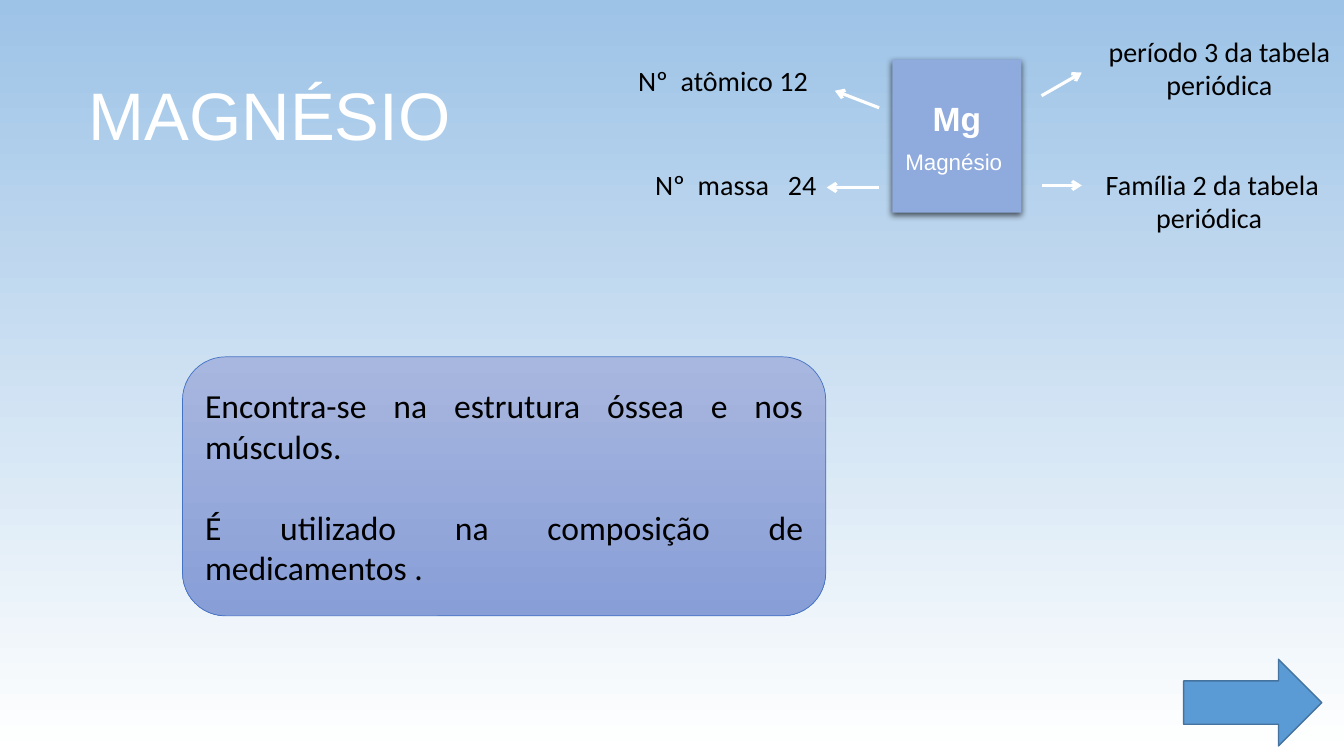
from dataclasses import dataclass

from lxml import etree
from pptx import Presentation
from pptx import util as u
from pptx.dml.color import RGBColor
from pptx.enum import shapes, text
from pptx.oxml import ns

Kind = shapes.MSO_SHAPE
Align = text.PP_ALIGN


@dataclass(frozen=True)
class Theme:
    white: str = "FFFFFF"
    black: str = "000000"
    sky: str = "9DC3E6"
    tile: str = "8FAADC"
    card: tuple = ("A8B7DF", "889ED7")
    edge: str = "4472C4"
    next: str = "5B9BD5"
    rim: str = "43739E"
    head: str = "Arial"
    body: str = "Calibri"
    title: int = 48
    large: int = 24
    label: int = 20
    small: int = 16


T = Theme()


def color(code):
    return RGBColor.from_string(code)


def box(*sides):
    return [u.Inches(side) for side in sides]


def blend(fill, top, low):
    """Fill with a gradient that runs from top to bottom."""
    fill.gradient()
    fill.gradient_angle = 270
    for stop, code in zip(fill.gradient_stops, (top, low)):
        stop.color.rgb = color(code)


def write(frame, words, size=T.label, font=T.body, ink=T.black, bold=False,
          align=Align.LEFT, before=0, more=False):
    """Write one paragraph; more=True adds it below those already there."""
    frame.word_wrap = True
    para = frame.add_paragraph() if more else frame.paragraphs[0]
    para.alignment = align
    para.space_before = u.Pt(before)
    run = para.add_run()
    run.text = words
    run.font.size = u.Pt(size)
    run.font.name = font
    run.font.bold = bold
    run.font.color.rgb = color(ink)


def label(slide, place, words, **style):
    write(slide.shapes.add_textbox(*box(*place)).text_frame, words, **style)


def shape(slide, kind, place, fill, line=None, width=1):
    item = slide.shapes.add_shape(kind, *box(*place))
    item.shadow.inherit = False
    if isinstance(fill, tuple):
        blend(item.fill, *fill)
    else:
        item.fill.solid()
        item.fill.fore_color.rgb = color(fill)
    if line:
        item.line.color.rgb = color(line)
        item.line.width = u.Pt(width)
    else:
        item.line.fill.background()
    item.text_frame.vertical_anchor = text.MSO_ANCHOR.MIDDLE
    return item


def shade(item):
    """Give the shape a soft shadow below it."""
    effects = item._element.spPr.find(ns.qn("a:effectLst"))
    outer = etree.SubElement(
        effects, ns.qn("a:outerShdw"), blurRad=str(u.Pt(4.5)),
        dist=str(u.Pt(1.5)), dir="5400000", algn="ctr", rotWithShape="0")
    tint = etree.SubElement(outer, ns.qn("a:srgbClr"), val=T.black)
    etree.SubElement(tint, ns.qn("a:alpha"), val="63000")


def arrow(slide, *ends):
    item = slide.shapes.add_connector(
        shapes.MSO_CONNECTOR.STRAIGHT, *box(*ends))
    item.line.color.rgb = color(T.white)
    item.line.width = u.Pt(2.25)
    etree.SubElement(item.line._get_or_add_ln(), ns.qn("a:tailEnd"),
                     type="arrow")
    etree.SubElement(item._element.spPr, ns.qn("a:effectLst"))


def element(slide):
    """Draw the element tile with its four labelled facts."""
    tile = shape(slide, Kind.RECTANGLE, (8.85, 0.59, 1.28, 1.52), T.tile)
    shade(tile)
    style = dict(font=T.head, ink=T.white, align=Align.CENTER)
    write(tile.text_frame, "Mg", size=T.large, bold=True, **style)
    write(tile.text_frame, "Magnésio ", size=T.small, before=7, more=True,
          **style)

    facts = [
        ("Nº  atômico 12", (6.23, 0.58, 1.97, 0.44), Align.LEFT,
         (8.72, 1.07, 8.28, 0.9)),
        ("Nº  massa   24", (6.4, 1.61, 1.97, 0.44), Align.LEFT,
         (8.72, 1.86, 8.2, 1.86)),
        ("período 3 da tabela periódica", (10.86, 0.29, 2.47, 0.77),
         Align.CENTER, (10.33, 0.95, 10.73, 0.72)),
        ("Família 2 da tabela periódica ", (10.71, 1.61, 2.63, 0.77),
         Align.CENTER, (10.33, 1.84, 10.73, 1.84)),
    ]
    for words, place, align, ends in facts:
        label(slide, place, words, align=align)
        arrow(slide, *ends)


def uses(slide):
    card = shape(slide, Kind.ROUNDED_RECTANGLE, (1.81, 3.54, 6.38, 2.57),
                 T.card, T.edge, 0.5)
    style = dict(size=T.large, align=Align.JUSTIFY)
    write(card.text_frame, "Encontra-se na estrutura óssea e nos músculos.",
          **style)
    write(card.text_frame, "É utilizado na composição de medicamentos .",
          before=29, more=True, **style)


def main():
    deck = Presentation()
    deck.slide_width, deck.slide_height = box(13.33, 7.5)
    slide = deck.slides.add_slide(deck.slide_layouts[6])
    blend(slide.background.fill, T.sky, T.white)
    label(slide, (0.78, 0.68, 4, 0.91), "MAGNÉSIO", size=T.title,
          font=T.head, ink=T.white)
    element(slide)
    uses(slide)
    onward = shape(slide, Kind.LEFT_ARROW, (11.74, 6.54, 1.37, 0.86),
                   T.next, T.rim)
    onward.rotation = 180
    deck.save("out.pptx")


if __name__ == "__main__":
    main()
